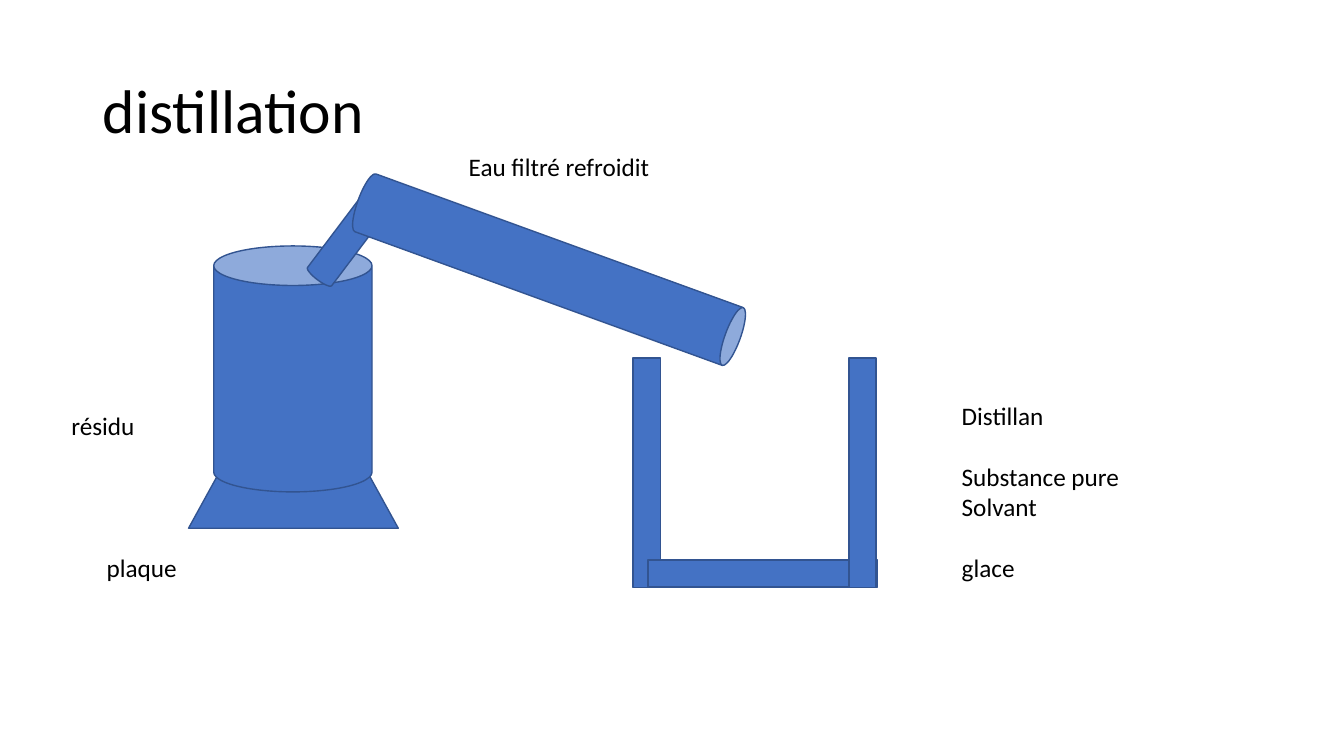
from dataclasses import dataclass

from pptx import Presentation
from pptx.dml.color import RGBColor
from pptx.enum.shapes import MSO_SHAPE
from pptx.enum.text import MSO_ANCHOR, MSO_AUTO_SIZE, PP_ALIGN
from pptx.util import Inches, Pt


@dataclass(frozen=True)
class Theme:
    font: str = "Calibri"
    text: RGBColor = RGBColor(0x00, 0x00, 0x00)
    fill: RGBColor = RGBColor(0x44, 0x72, 0xC4)
    outline: RGBColor = RGBColor(0x32, 0x54, 0x91)
    title_size: Pt = Pt(44)
    label_size: Pt = Pt(18)
    group_gap: Pt = Pt(22)
    outline_width: Pt = Pt(1)


class SlideBuilder:
    def __init__(self, slide, theme):
        self.slide = slide
        self.theme = theme

    def format_runs(self, paragraph, size):
        for run in paragraph.runs:
            run.font.name = self.theme.font
            run.font.size = size
            run.font.color.rgb = self.theme.text

    def add_title(self, text, left, top, width, height):
        title = self.slide.shapes.title
        title.left, title.top = Inches(left), Inches(top)
        title.width, title.height = Inches(width), Inches(height)
        frame = title.text_frame
        frame.text = text
        frame.auto_size = MSO_AUTO_SIZE.NONE
        frame.vertical_anchor = MSO_ANCHOR.MIDDLE
        paragraph = frame.paragraphs[0]
        paragraph.alignment = PP_ALIGN.LEFT
        paragraph.line_spacing = 0.9
        self.format_runs(paragraph, self.theme.title_size)

    def add_label(self, groups, left, top, width, height):
        box = self.slide.shapes.add_textbox(
            Inches(left), Inches(top), Inches(width), Inches(height))
        frame = box.text_frame
        frame.word_wrap = True
        frame.auto_size = MSO_AUTO_SIZE.SHAPE_TO_FIT_TEXT
        frame.text = "\n".join(line for group in groups for line in group)
        for paragraph in frame.paragraphs:
            self.format_runs(paragraph, self.theme.label_size)
        group_start = 0
        for group in groups[:-1]:
            group_start += len(group)
            frame.paragraphs[group_start].space_before = self.theme.group_gap

    def add_solid(self, kind, left, top, width, height, rotation=0):
        shape = self.slide.shapes.add_shape(
            kind, Inches(left), Inches(top), Inches(width), Inches(height))
        shape.rotation = rotation
        shape.shadow.inherit = False
        shape.fill.solid()
        shape.fill.fore_color.rgb = self.theme.fill
        shape.line.color.rgb = self.theme.outline
        shape.line.width = self.theme.outline_width

    def add_beaker(self, left, top, size, thickness):
        right = left + 2.14
        base_left = left + 1.15
        base_top = top + 1
        for x, y, rotation in ((left, top, 0), (base_left, base_top, 90), (right, top, 0)):
            self.add_solid(MSO_SHAPE.RECTANGLE, x, y, thickness, size, rotation)


def main():
    presentation = Presentation()
    presentation.slide_width = Inches(13.33)
    presentation.slide_height = Inches(7.5)
    slide = presentation.slides.add_slide(presentation.slide_layouts[5])
    builder = SlideBuilder(slide, Theme())

    builder.add_title("distillation", 0.92, 0.4, 11.5, 1.45)
    builder.add_label([["résidu"]], 0.61, 4.02, 1.18, 0.4)
    builder.add_label([["plaque"]], 0.96, 5.43, 1.1, 0.4)
    builder.add_solid(MSO_SHAPE.ISOSCELES_TRIANGLE, 1.87, 3.35, 2.08, 1.89)
    builder.add_solid(MSO_SHAPE.CAN, 2.12, 2.44, 1.57, 2.44)
    builder.add_label([["Eau filtré refroidit"]], 4.55, 1.45, 2.27, 0.4)
    builder.add_solid(MSO_SHAPE.CAN, 3.31, 1.84, 0.3, 1.04, 37)
    builder.add_solid(MSO_SHAPE.CAN, 5.14, 0.66, 0.61, 4.03, 110)
    builder.add_beaker(6.28, 3.55, 2.28, 0.27)
    builder.add_label([["Distillan"], ["Substance pure", "Solvant"], ["glace"]],
                      9.44, 3.92, 3, 1.92)

    presentation.save("out.pptx")


if __name__ == "__main__":
    main()
